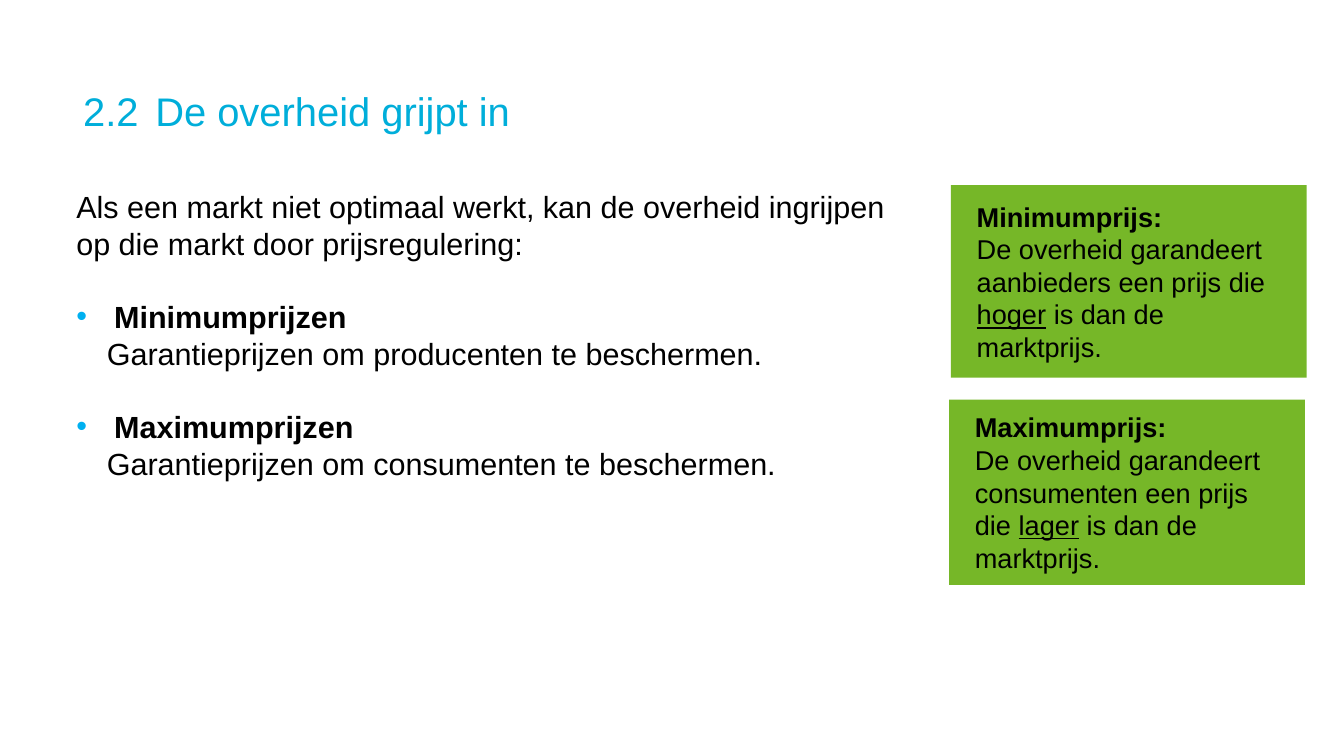
from lxml import etree
from pptx import Presentation
from pptx import util as u
from pptx.dml.color import RGBColor
from pptx.enum import text
from pptx.oxml.ns import qn

CYAN = RGBColor(0x00, 0xAE, 0xDA)
BULLET_BLUE = RGBColor(0x00, 0xB0, 0xF0)
GREEN = RGBColor(0x76, 0xB7, 0x28)
BLACK = RGBColor(0, 0, 0)
FONT = "Arial"
TWO_CONTENT = 3

TITLE_BOX = (1.36, 1.36, 19.25, 0.91)
LIST_BOX = (1.15, 3.03, 13.7, 4.95)
MINIMUM_BOX = (15.56, 3.03, 5.82, 3.15)
MAXIMUM_BOX = (15.53, 6.54, 5.82, 3.03)

INTRO = ("Als een markt niet optimaal werkt, kan de overheid ingrijpen "
         "op die markt door prijsregulering:")
MEASURES = [
    ("Minimumprijzen", "Garantieprijzen om producenten te beschermen."),
    ("Maximumprijzen", "Garantieprijzen om consumenten te beschermen."),
]


def place(shape, box):
    shape.left, shape.top, shape.width, shape.height = map(u.Inches, box)


def set_margins(frame, horizontal, vertical):
    frame.margin_left = frame.margin_right = u.Inches(horizontal)
    frame.margin_top = frame.margin_bottom = u.Inches(vertical)


def format_para(para, size, color=BLACK, bold=False, bullet=None, hanging=0, tab=None):
    """Set bullet, hanging indent, tab stop and font of a paragraph."""
    props = para._p.get_or_add_pPr()
    props.set("marL", str(u.Inches(hanging)))
    props.set("indent", str(-u.Inches(hanging)))
    if bullet:
        bullet_color = etree.SubElement(props, qn("a:buClr"))
        etree.SubElement(bullet_color, qn("a:srgbClr"), val=str(BULLET_BLUE))
        etree.SubElement(props, qn("a:buFont"), typeface=FONT)
        etree.SubElement(props, qn("a:buChar"), char=bullet)
    else:
        etree.SubElement(props, qn("a:buNone"))
    if tab:
        stops = etree.SubElement(props, qn("a:tabLst"))
        etree.SubElement(stops, qn("a:tab"), pos=str(u.Inches(tab)), algn="l")
    para.alignment = text.PP_ALIGN.LEFT
    para.space_before = u.Pt(0)
    for span in para.runs:
        span.font.name, span.font.size = FONT, u.Pt(size)
        span.font.color.rgb, span.font.bold = color, bold


def add_title(page, box):
    title = page.shapes.title
    place(title, box)
    frame = title.text_frame
    set_margins(frame, 0, 0)
    frame.vertical_anchor = text.MSO_ANCHOR.MIDDLE
    frame.text = "2.2\t De overheid grijpt in"
    format_para(frame.paragraphs[0], 47, CYAN, tab=1)


def add_measures(page, box):
    frame = page.shapes.add_textbox(*map(u.Inches, box)).text_frame
    frame.word_wrap = True
    frame.text = INTRO
    format_para(frame.paragraphs[0], 36)
    for name, purpose in MEASURES:
        heading = frame.add_paragraph()
        heading.text = name
        format_para(heading, 36, bold=True, bullet="•", hanging=0.62)
        heading.space_before = u.Pt(43)
        detail = frame.add_paragraph()
        detail.text = "\t" + purpose
        format_para(detail, 36, tab=1)


def fill_definition(panel, box, term, before, stressed, after):
    """Fill a green panel with a bold term and a sentence with one underlined word."""
    place(panel, box)
    panel.fill.solid()
    panel.fill.fore_color.rgb = GREEN
    frame = panel.text_frame
    set_margins(frame, 0.42, 0.42)
    frame.vertical_anchor = text.MSO_ANCHOR.MIDDLE
    frame.auto_size = text.MSO_AUTO_SIZE.NONE
    frame.text = term
    format_para(frame.paragraphs[0], 32, bold=True)
    sentence = frame.add_paragraph()
    for words in (before, stressed, after):
        span = sentence.add_run()
        span.text = words
        span.font.underline = words == stressed
    format_para(sentence, 32)


def main():
    deck = Presentation()
    deck.slide_width, deck.slide_height = u.Inches(21.99), u.Inches(12.37)
    page = deck.slides.add_slide(deck.slide_layouts[TWO_CONTENT])
    add_title(page, TITLE_BOX)
    add_measures(page, LIST_BOX)
    fill_definition(page.placeholders[1], MINIMUM_BOX, "Minimumprijs:",
                    "De overheid garandeert aanbieders een prijs die ", "hoger",
                    " is dan de marktprijs.")
    fill_definition(page.placeholders[2], MAXIMUM_BOX, "Maximumprijs:",
                    "De overheid garandeert consumenten een prijs die ", "lager",
                    " is dan de marktprijs.")
    deck.save("out.pptx")


if __name__ == "__main__":
    main()
